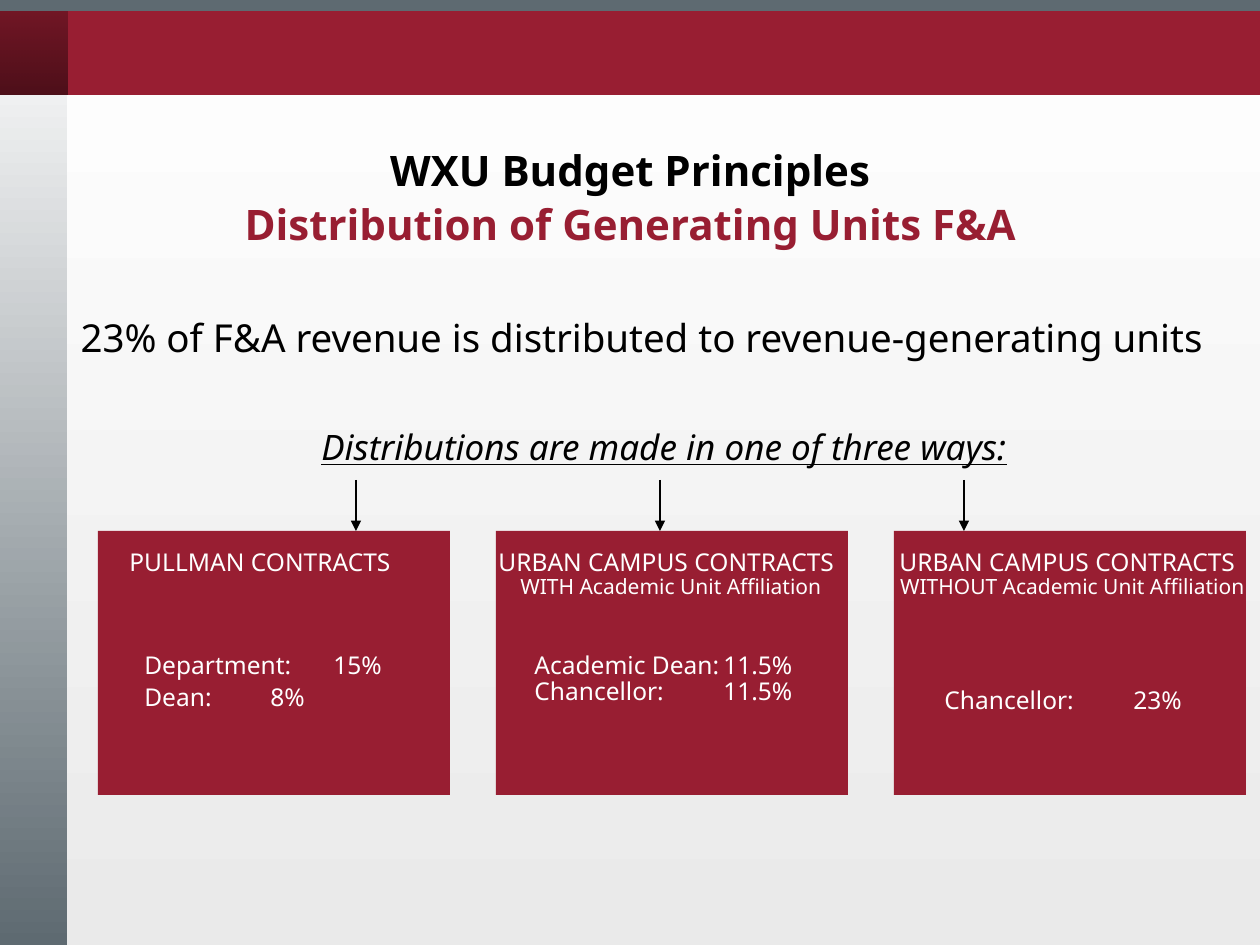
from dataclasses import dataclass

from lxml import etree
from pptx import Presentation
from pptx import util as u
from pptx.dml.color import RGBColor
from pptx.enum import shapes, text
from pptx.oxml.ns import qn


@dataclass(frozen=True)
class Theme:
    font: str = "Noto Sans"
    crimson: str = "981E32"
    gray: str = "5E6A71"
    pale: str = "EAEAEA"
    white: str = "FFFFFF"
    black: str = "000000"
    title: int = 24
    statement: int = 22
    lead: int = 20
    label: int = 14
    detail: int = 12


THEME = Theme()
SCALE = 914400 // 126  # EMU per px
WIDTH, HEIGHT = 1260, 945

# Content
TITLE = ["WXU Budget Principles", "Distribution of Generating Units F&A"]
BODY = ["23% of F&A revenue is distributed to revenue-generating units",
        "Distributions are made in one of three ways:"]
# heading box and share box: left, top, width; tab is the right edge of the values
CARDS = [
    dict(heading="PULLMAN CONTRACTS", detail=None, heading_box=(117, 544, 339),
         shares=["Department:\t15%", "Dean:\t8%"],
         share_box=(132, 647, 275), tab=233, gap=3.5),
    dict(heading="URBAN CAMPUS CONTRACTS", detail="WITH Academic Unit Affiliation",
         heading_box=(486, 544, 370),
         shares=["Academic Dean:\t11.5%", "Chancellor:\t11.5%"],
         share_box=(522, 647, 317), tab=266, gap=0),
    dict(heading="URBAN CAMPUS CONTRACTS", detail="WITHOUT Academic Unit Affiliation",
         heading_box=(887, 544, 371),
         shares=["Chancellor:\t23%"],
         share_box=(932, 682, 291), tab=241, gap=0),
]
CARD_LEFT, CARD_TOP, CARD_WIDTH, CARD_HEIGHT, CARD_PITCH = 98, 531, 352, 264, 398
ARROW_LEFT, ARROW_TOP, ARROW_PITCH = 356, 480, 304


def px(*values):
    return [u.Emu(round(value * SCALE)) for value in values]


def color(value):
    return RGBColor.from_string(value)


def set_gradient(fill, bottom, top, alphas=()):
    fill.gradient()
    fill.gradient_angle = 90
    for stop, value in zip(fill.gradient_stops, (bottom, top)):
        stop.color.rgb = color(value)
    if alphas:
        for node, alpha in zip(fill._fill._gradFill.iter(qn("a:srgbClr")), alphas):
            etree.SubElement(node, qn("a:alpha"), val=str(alpha * 1000))


def add_rectangle(slide, box, fill=None):
    shape = slide.shapes.add_shape(shapes.MSO_SHAPE.RECTANGLE, *px(*box))
    shape.shadow.inherit = False
    shape.line.fill.background()
    if fill:
        shape.fill.solid()
        shape.fill.fore_color.rgb = color(fill)
    return shape


def write(frame, content, size, ink, first=False, align=text.PP_ALIGN.LEFT, before=0,
          spacing=0.9, bold=False, italic=False, underline=False, tab=None):
    paragraph = frame.paragraphs[0] if first else frame.add_paragraph()
    paragraph.alignment = align
    paragraph.space_before = u.Pt(before)
    paragraph.space_after = u.Pt(0)
    paragraph.line_spacing = spacing
    properties = paragraph._p.get_or_add_pPr()
    properties.set("marL", "0")
    properties.set("indent", "0")
    etree.SubElement(properties, qn("a:buNone"))
    if tab:
        tabs = etree.SubElement(properties, qn("a:tabLst"))
        etree.SubElement(tabs, qn("a:tab"), pos=str(px(tab)[0]), algn="r")
    run = paragraph.add_run()
    run.text = content
    font = run.font
    font.name, font.size, font.color.rgb = THEME.font, u.Pt(size), color(ink)
    font.bold, font.italic, font.underline = bold, italic, underline


def prepare(shape, box, anchor=text.MSO_ANCHOR.TOP):
    shape.left, shape.top, shape.width, shape.height = px(*box)
    frame = shape.text_frame
    frame.word_wrap = True
    frame.auto_size = text.MSO_AUTO_SIZE.NONE
    frame.vertical_anchor = anchor
    return frame


def add_text_box(slide, left, top, width, height):
    box = (left, top, width, height)
    return prepare(slide.shapes.add_textbox(*px(*box)), box)


def add_arrow(slide, x, top, bottom):
    arrow = slide.shapes.add_connector(shapes.MSO_CONNECTOR.STRAIGHT, *px(x, top, x, bottom))
    arrow.line.color.rgb = color(THEME.black)
    arrow.line.width = u.Pt(0.75)
    etree.SubElement(arrow.line._get_or_add_ln(), qn("a:tailEnd"), type="triangle")
    etree.SubElement(arrow._element.spPr, qn("a:effectLst"))


def add_frame(slide):
    set_gradient(slide.background.fill, THEME.pale, THEME.white)
    set_gradient(add_rectangle(slide, (0, 0, 67, HEIGHT)).fill, THEME.gray, THEME.white)
    add_rectangle(slide, (0, 11, WIDTH, 84), THEME.crimson)
    corner = add_rectangle(slide, (0, 11, 67, 84))
    set_gradient(corner.fill, THEME.black, THEME.black, alphas=(50, 25))
    add_rectangle(slide, (0, 0, WIDTH, 11), THEME.gray)


def add_card(slide, index, card):
    left = CARD_LEFT + index * CARD_PITCH
    add_rectangle(slide, (left, CARD_TOP, CARD_WIDTH, CARD_HEIGHT), THEME.crimson)
    heading = add_text_box(slide, *card["heading_box"], 70)
    write(heading, card["heading"], THEME.label, THEME.white, first=True)
    if card["detail"]:
        write(heading, card["detail"], THEME.detail, THEME.white,
              align=text.PP_ALIGN.CENTER)
    shares = add_text_box(slide, *card["share_box"], 85)
    for row, share in enumerate(card["shares"]):
        write(shares, share, THEME.label, THEME.white, first=row == 0,
              before=card["gap"] if row else 0, tab=card["tab"])


def main():
    presentation = Presentation()
    presentation.slide_width, presentation.slide_height = px(WIDTH, HEIGHT)
    slide = presentation.slides.add_slide(presentation.slide_layouts[1])
    add_frame(slide)

    # Title and statement
    title = prepare(slide.shapes.title, (126, 134, 1008, 122), text.MSO_ANCHOR.BOTTOM)
    for row, (line, ink) in enumerate(zip(TITLE, (THEME.black, THEME.crimson))):
        write(title, line, THEME.title, ink, first=row == 0, before=5 * row,
              align=text.PP_ALIGN.CENTER, bold=True)
    body = prepare(slide.placeholders[1], (68, 308, 1192, 186))
    write(body, BODY[0], THEME.statement, THEME.black, first=True, spacing=1)
    write(body, BODY[1], THEME.lead, THEME.black, before=37, spacing=1,
          align=text.PP_ALIGN.CENTER, italic=True, underline=True)

    # Three ways of distribution
    for index, card in enumerate(CARDS):
        add_card(slide, index, card)
        add_arrow(slide, ARROW_LEFT + index * ARROW_PITCH, ARROW_TOP, CARD_TOP)

    presentation.save("out.pptx")


if __name__ == "__main__":
    main()
